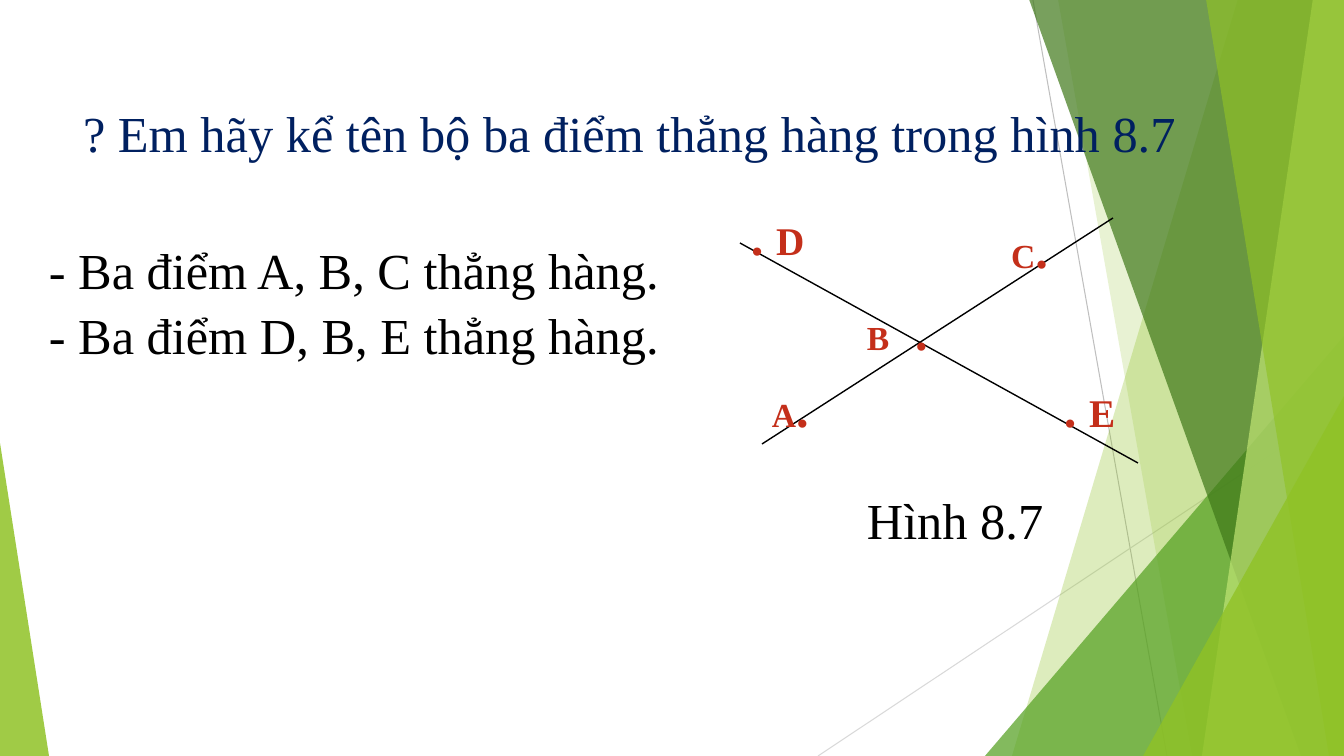
from lxml import etree
from pptx import Presentation
from pptx.dml.color import RGBColor
from pptx.enum.shapes import MSO_CONNECTOR, MSO_SHAPE
from pptx.enum.text import MSO_ANCHOR, MSO_AUTO_SIZE, PP_ALIGN
from pptx.oxml.ns import qn
from pptx.util import Pt

STRAIGHT = MSO_CONNECTOR.STRAIGHT
TRIANGLE = MSO_SHAPE.ISOSCELES_TRIANGLE
BOTTOM = MSO_ANCHOR.BOTTOM
FIXED = MSO_AUTO_SIZE.NONE
LEFT = PP_ALIGN.LEFT

LIME = RGBColor(0x90, 0xC2, 0x26)
PALE = RGBColor(0xC0, 0xE4, 0x74)
GREEN = RGBColor(0x54, 0xA0, 0x21)
DARK = RGBColor(0x3F, 0x78, 0x19)
GRAY = RGBColor(0xBF, 0xBF, 0xBF)
LIGHT = RGBColor(0xD9, 0xD9, 0xD9)
NAVY = RGBColor(0x00, 0x20, 0x60)
RED = RGBColor(0xC4, 0x2F, 0x1A)
BLACK = RGBColor(0, 0, 0)

FONT = "Times New Roman"
WIDE, HIGH = 1344, 756
SCALE = 914400 / 100.8

TITLE = "? Em hãy kể tên bộ ba điểm thẳng hàng trong hình 8.7"
ANSWERS = ["- Ba điểm A, B, C thẳng hàng.", "- Ba điểm D, B, E thẳng hàng."]
CAPTION = "Hình 8.7"

RAYS = [((1033, 0), (1167, HIGH), GRAY), ((WIDE, 406), (818, HIGH), LIGHT)]
LINES = [((1113, 218), (762, 444)), ((740, 243), (1138, 463))]

DECOR = [
    ("band", (1238, 1012), LIME, 30),
    ("band", (1058, 1192), LIME, 20),
    ("wedge", (985, 336, 359, 420, 1), GREEN, 72),
    ("band", (1029, 1301), DARK, 70),
    ("band", (1313, 1202), PALE, 70),
    ("band", (1206, 1329), LIME, 65),
    ("wedge", (1143, 396, 201, 360, 1), LIME, 80),
    ("wedge", (0, 443, 49, 313, 0), LIME, 85),
]

TAB, INSET, INDENT = 48, 10, 35
POINTS = [
    ((762, 372, 74, 72), INSET, [("A", 24), (".", 36)]),
    ((857, 295, 98, 72), INSET, [("B\t", 24), (".", 36)]),
    ((1029, 372, 119, 72), INDENT, [(". ", 36), ("E", 28)]),
    ((1001, 213, 74, 72), INSET, [("C", 24), (".", 36)]),
    ((716, 200, 119, 72), INDENT, [(". ", 36), ("D", 28)]),
]


def px(*sizes):
    return [round(size * SCALE) for size in sizes]


def add_line(slide, start, end, color, width):
    line = slide.shapes.add_connector(STRAIGHT, *px(*start, *end))
    line.line.color.rgb = color
    line.line.width = Pt(width)
    etree.SubElement(line._element.spPr, qn("a:effectLst"))


def add_band(slide, top, foot):
    path = slide.shapes.build_freeform(top, -1, scale=SCALE)
    path.add_line_segments([(WIDE, -1), (WIDE, HIGH), (foot, HIGH)], close=True)
    return path.convert_to_shape()


def add_wedge(slide, left, top, width, height, tip):
    wedge = slide.shapes.add_shape(TRIANGLE, *px(left, top, width, height))
    wedge.adjustments[0] = tip
    return wedge


def paint(shape, color, alpha):
    shape.shadow.inherit = False
    shape.line.fill.background()
    shape.fill.solid()
    shape.fill.fore_color.rgb = color
    tint = shape._element.spPr.find(qn("a:solidFill"))[0]
    etree.SubElement(tint, qn("a:alpha"), val=str(alpha * 1000))


def style(para, color, size=None, bold=False):
    para.font.name = FONT
    para.font.color.rgb = color
    para.font.bold = bold
    if size:
        para.font.size = Pt(size)


def add_box(slide, place):
    frame = slide.shapes.add_textbox(*px(*place)).text_frame
    frame.word_wrap = True
    return frame


def add_text(slide, place, lines, gap=1.0):
    frame = add_box(slide, place)
    frame.text = "\n".join(lines)
    for para in frame.paragraphs:
        para.line_spacing = gap
        style(para, BLACK, 36)


def add_point(slide, place, inset, runs):
    frame = add_box(slide, place)
    frame.margin_left = px(inset)[0]
    para = frame.paragraphs[0]
    style(para, RED, bold=True)
    for text, size in runs:
        run = para.add_run()
        run.text = text
        run.font.size = Pt(size)
        if "\t" in text:
            stops = etree.Element(qn("a:tabLst"))
            etree.SubElement(stops, qn("a:tab"), pos=str(px(TAB)[0]), algn="l")
            para._p.pPr.insert(0, stops)


def set_title(slide):
    title = slide.shapes.title
    title.left, title.top, title.width, title.height = px(73, 82, 1159, 86)
    frame = title.text_frame
    frame.text = TITLE
    frame.vertical_anchor = BOTTOM
    frame.auto_size = FIXED
    frame.paragraphs[0].alignment = LEFT
    style(frame.paragraphs[0], NAVY, 36)
    slide.shapes._spTree.append(title._element)


def main():
    deck = Presentation()
    deck.slide_width, deck.slide_height = px(WIDE, HIGH)
    slide = deck.slides.add_slide(deck.slide_layouts[5])
    for start, end, color in RAYS:
        add_line(slide, start, end, color, 0.75)
    make = {"band": add_band, "wedge": add_wedge}
    for kind, place, color, alpha in DECOR:
        paint(make[kind](slide, *place), color, alpha)
    set_title(slide)
    for start, end in LINES:
        add_line(slide, start, end, BLACK, 1)
    for place, inset, runs in POINTS:
        add_point(slide, place, inset, runs)
    add_text(slide, (39, 230, 661, 136), ANSWERS, 1.07)
    add_text(slide, (857, 484, 234, 72), [CAPTION])
    deck.save("out.pptx")


if __name__ == "__main__":
    main()
